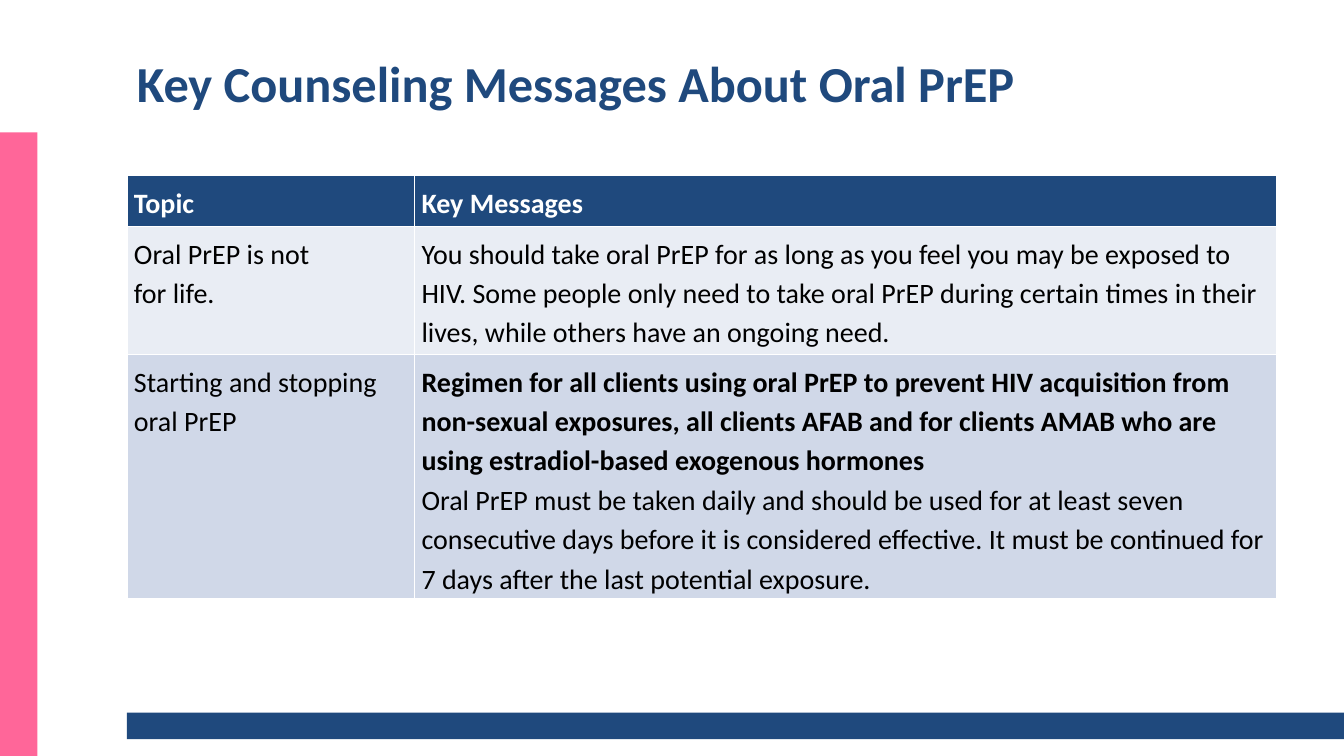
from lxml import etree
from pptx import Presentation
from pptx import util as u
from pptx.dml.color import RGBColor
from pptx.enum import shapes, text
from pptx.oxml import ns

COLORS = {
    "navy": "1F497D",
    "pink": "FF6699",
    "white": "FFFFFF",
    "black": "000000",
    "light": "E9EDF4",
    "shade": "D0D8E8",
}
WIDTH, HEIGHT = 960, 540
LEFT, CONTENT_WIDTH = 90.7, 821.5


class CounselingSlide:
    font = "Calibri"
    body_size = 20
    line_spacing = 1.15

    def __init__(self, deck):
        self.slide = deck.slides.add_slide(deck.slide_layouts[6])

    def color(self, name):
        return RGBColor.from_string(COLORS[name])

    def format_runs(self, paragraph, size, color, bold):
        for run in paragraph.runs:
            run.font.name = self.font
            run.font.size = u.Pt(size)
            run.font.bold = bold
            run.font.color.rgb = self.color(color)

    def bar(self, left, top, width, height, color):
        band = self.slide.shapes.add_shape(
            shapes.MSO_SHAPE.RECTANGLE, *map(u.Pt, (left, top, width, height)))
        band.shadow.inherit = False
        band.fill.solid()
        band.fill.fore_color.rgb = self.color(color)
        band.line.fill.background()

    def title(self, left, top, width, height, wording):
        heading = self.slide.shapes.add_textbox(
            *map(u.Pt, (left, top, width, height))).text_frame
        heading.word_wrap = True
        heading.vertical_anchor = text.MSO_ANCHOR.MIDDLE
        heading.text = wording
        self.format_runs(heading.paragraphs[0], 36, "navy", True)

    def borders(self, cell):
        properties = cell._tc.get_or_add_tcPr()
        for position, side in enumerate(("lnL", "lnR", "lnT", "lnB")):
            edge = etree.Element(ns.qn(f"a:{side}"), w=str(u.Pt(1)))
            fill = etree.SubElement(edge, ns.qn("a:solidFill"))
            etree.SubElement(fill, ns.qn("a:srgbClr"), val=COLORS["white"])
            properties.insert(position, edge)

    def cell(self, cell, messages, fill, color, bold_count):
        cell.margin_left = cell.margin_right = u.Pt(5)
        cell.margin_top = cell.margin_bottom = u.Pt(4.3)
        cell.fill.solid()
        cell.fill.fore_color.rgb = self.color(fill)
        self.borders(cell)
        cell.text_frame.text = "\n".join(messages)
        for index, paragraph in enumerate(cell.text_frame.paragraphs):
            paragraph.line_spacing = self.line_spacing
            self.format_runs(paragraph, self.body_size, color, index < bold_count)

    def table(self, left, top, column_widths, row_heights, rows):
        frame = self.slide.shapes.add_table(
            len(row_heights), len(column_widths),
            *map(u.Pt, (left, top, sum(column_widths), sum(row_heights))))
        grid = frame.table
        for column, width in zip(grid.columns, column_widths):
            column.width = u.Pt(width)
        for row, height, (fill, color, contents) in zip(grid.rows, row_heights, rows):
            row.height = u.Pt(height)
            for cell, (messages, bold_count) in zip(row.cells, contents):
                self.cell(cell, messages, fill, color, bold_count)


def main():
    deck = Presentation()
    deck.slide_width, deck.slide_height = u.Pt(WIDTH), u.Pt(HEIGHT)
    page = CounselingSlide(deck)

    page.bar(0, 94.5, 26.7, HEIGHT - 94.5, "pink")
    page.bar(LEFT, 509, WIDTH - LEFT, 19, "navy")
    page.title(LEFT, 25.2, CONTENT_WIDTH, 67.7, "Key Counseling Messages About Oral PrEP")

    topic_width = 205.4
    rows = [
        ("navy", "white", [(["Topic"], 1), (["Key Messages"], 1)]),
        ("light", "black", [
            (["Oral PrEP is not\vfor life."], 0),
            (["You should take oral PrEP for as long as you feel you may be exposed to "
              "HIV. Some people only need to take oral PrEP during certain times in "
              "their lives, while others have an ongoing need."], 0),
        ]),
        ("shade", "black", [
            (["Starting and stopping oral PrEP"], 0),
            (["Regimen for all clients using oral PrEP to prevent HIV acquisition from "
              "non-sexual exposures, all clients AFAB and for clients AMAB who are "
              "using estradiol-based exogenous hormones",
              "Oral PrEP must be taken daily and should be used for at least seven "
              "consecutive days before it is considered effective. It must be "
              "continued for 7 days after the last potential exposure."], 1),
        ]),
    ]
    page.table(LEFT, 125.5, [topic_width, CONTENT_WIDTH - topic_width],
               [34.6, 90, 172.8], rows)
    deck.save("out.pptx")


if __name__ == "__main__":
    main()
